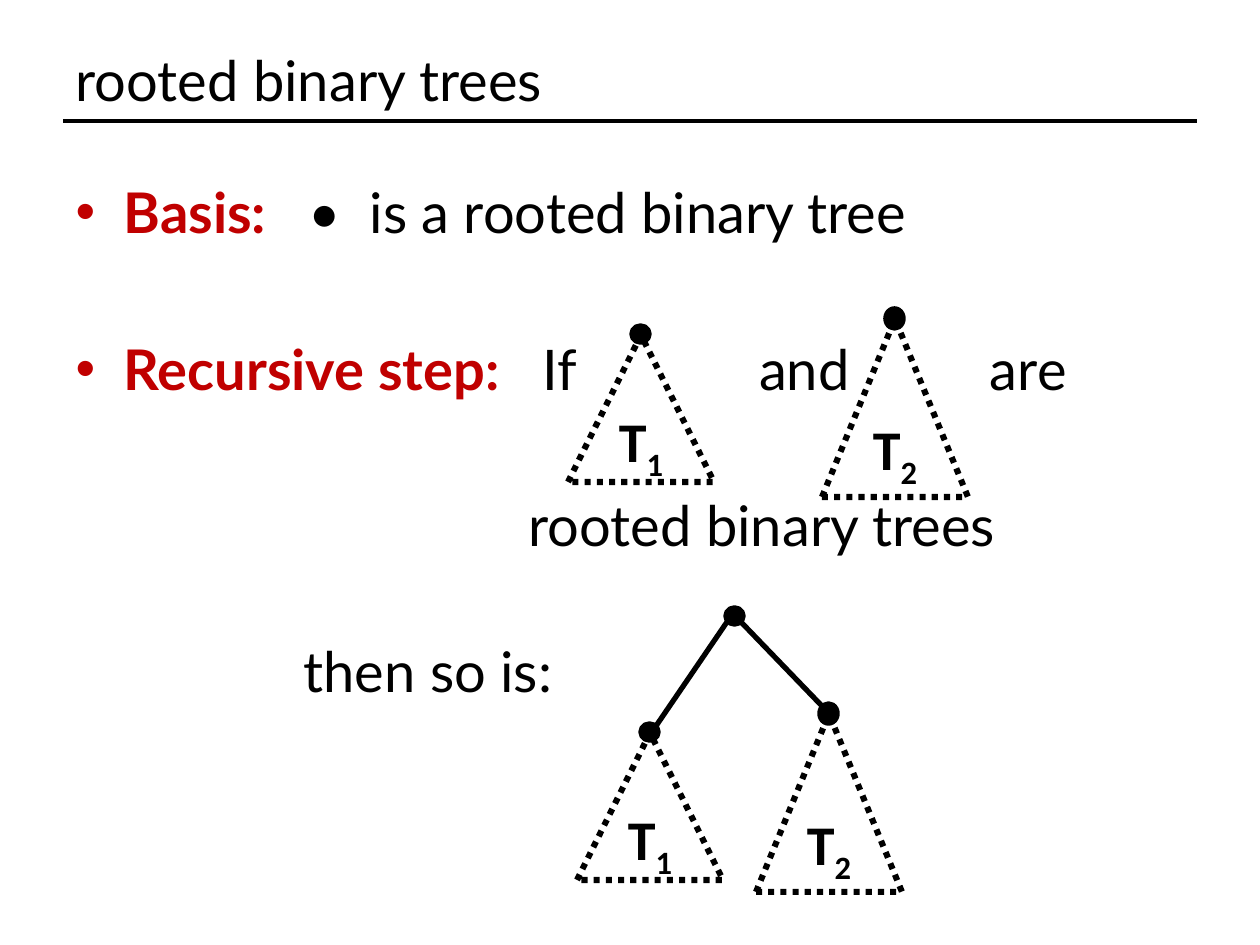
import dataclasses

import lxml.etree
import pptx
import pptx.dml.color
import pptx.enum.dml
import pptx.enum.shapes
import pptx.enum.text
import pptx.oxml.ns
import pptx.util

SCALE = 914400 / 126
Shapes = pptx.enum.shapes.MSO_SHAPE
Align = pptx.enum.text.PP_ALIGN
Anchor = pptx.enum.text.MSO_ANCHOR


@dataclasses.dataclass(frozen=True)
class Theme:
    ink: str = "000000"
    accent: str = "C00000"
    text_font: str = "Lato"
    label_font: str = "Calibri"
    text_size: int = 32
    space_width: int = 8
    rule_width: float = 2
    edge_width: float = 3
    outline_width: float = 3.5


THEME = Theme()


def px(length):
    return pptx.util.Emu(round(length * SCALE))


def color(value):
    return pptx.dml.color.RGBColor.from_string(value)


def add_child(parent, tag, **attributes):
    return lxml.etree.SubElement(parent, pptx.oxml.ns.qn(tag), **attributes)


def place(shape, box):
    shape.left, shape.top, shape.width, shape.height = map(px, box)


def add_run(paragraph, text, ink=THEME.ink, bold=False, font=THEME.text_font):
    run = paragraph.add_run()
    run.text = text
    run.font.name = font
    run.font.size = pptx.util.Pt(THEME.text_size)
    run.font.bold = bold
    run.font.color.rgb = color(ink)
    return run


def add_gap(paragraph, spaces):
    run = add_run(paragraph, " ")
    extra = (spaces - 1) * THEME.space_width * 100
    run.font._element.set("spc", str(extra))


def format_paragraph(paragraph, space_before, margin, bullet=False):
    paragraph.alignment = Align.LEFT
    paragraph.space_before = pptx.util.Pt(space_before)
    properties = paragraph._p.get_or_add_pPr()
    properties.set("marL", str(px(margin)))
    properties.set("indent", str(px(-margin if bullet else 0)))
    if bullet:
        add_child(properties, "a:buFont", typeface="Arial")
        add_child(properties, "a:buChar", char="•")
    else:
        add_child(properties, "a:buNone")


def add_line(slide, start, end, width):
    line = slide.shapes.add_connector(
        pptx.enum.shapes.MSO_CONNECTOR.STRAIGHT, *map(px, start + end))
    line.line.color.rgb = color(THEME.ink)
    line.line.width = pptx.util.Pt(width)
    add_child(line._element.spPr, "a:effectLst")


def add_outlined(shapes, kind, box, width):
    shape = shapes.add_shape(kind, *map(px, box))
    shape.shadow.inherit = False
    shape.line.color.rgb = color(THEME.ink)
    shape.line.width = pptx.util.Pt(width)
    return shape


def add_node(shapes, box):
    node = add_outlined(shapes, Shapes.OVAL, box, THEME.rule_width)
    node.fill.solid()
    node.fill.fore_color.rgb = color(THEME.ink)


def add_subtree(slide, box, number):
    left, top, width, height = box
    group = slide.shapes.add_group_shape()
    triangle = add_outlined(
        group.shapes, Shapes.ISOSCELES_TRIANGLE, box, THEME.outline_width)
    triangle.fill.background()
    triangle.line.dash_style = pptx.enum.dml.MSO_LINE.ROUND_DOT
    frame = triangle.text_frame
    frame.word_wrap = False
    frame.vertical_anchor = Anchor.MIDDLE
    paragraph = frame.paragraphs[0]
    paragraph.alignment = Align.CENTER
    add_run(paragraph, "T", bold=True, font=THEME.label_font)
    subscript = add_run(paragraph, number, bold=True, font=THEME.label_font)
    subscript.font._element.set("baseline", "-25000")
    node_width, node_height = 19, round(height * 0.12)
    add_node(group.shapes, (left + (width - node_width) // 2,
                            top - node_height // 2 - 1,
                            node_width, node_height))


def add_title(slide, box):
    left, top, width, height = box
    title = slide.shapes.title
    place(title, box)
    title.text_frame.vertical_anchor = Anchor.MIDDLE
    paragraph = title.text_frame.paragraphs[0]
    paragraph.alignment = Align.LEFT
    add_run(paragraph, "rooted binary trees")
    bottom = top + height
    add_line(slide, (left, bottom), (left + width, bottom), THEME.rule_width)


def add_definition(slide, box):
    body = slide.placeholders[1]
    place(body, box)
    frame = body.text_frame
    frame.word_wrap = True
    frame.auto_size = pptx.enum.text.MSO_AUTO_SIZE.NONE
    frame.vertical_anchor = Anchor.TOP

    basis = frame.paragraphs[0]
    format_paragraph(basis, 6.4, 48, bullet=True)
    add_run(basis, "Basis:", THEME.accent, bold=True)
    add_gap(basis, 3)
    add_run(basis, "•")
    add_gap(basis, 2)
    add_run(basis, "is a rooted binary tree")

    step = frame.add_paragraph()
    format_paragraph(step, 51.2, 48, bullet=True)
    add_run(step, "Recursive step:", THEME.accent, bold=True)
    for spaces, word in ((3, "If"), (13, "and"), (10, "are")):
        add_gap(step, spaces)
        add_run(step, word)

    for text, space_before, margin in (
            ("rooted binary trees", 51.2, 453), ("then so is:", 45, 228)):
        paragraph = frame.add_paragraph()
        format_paragraph(paragraph, space_before, margin)
        add_run(paragraph, text)


def add_premises(slide, box):
    left, top, width, height = box
    add_subtree(slide, (left, top + 16, 146, 147), "1")
    add_subtree(slide, (left + width - 146, top, 146, height), "2")


def add_joined_tree(slide, box):
    left, top, width, height = box
    add_subtree(slide, (left, top + 126, 146, 147), "1")
    add_subtree(slide, (left + width - 146, top + 107, 146, 178), "2")
    add_node(slide.shapes, (left + 148, top, 19, 18))
    add_line(slide, (left + 150, top + 15), (left + 79, top + 119),
             THEME.edge_width)
    add_line(slide, (left + 164, top + 15), (left + 245, top + 99),
             THEME.edge_width)


def main():
    presentation = pptx.Presentation()
    presentation.slide_width = px(1260)
    presentation.slide_height = px(945)
    slide = presentation.slides.add_slide(presentation.slide_layouts[1])
    add_title(slide, (63, 38, 1134, 83))
    add_definition(slide, (63, 171, 1134, 708))
    add_premises(slide, (568, 319, 400, 178))
    add_joined_tree(slide, (577, 607, 325, 285))
    presentation.save("out.pptx")


if __name__ == "__main__":
    main()
